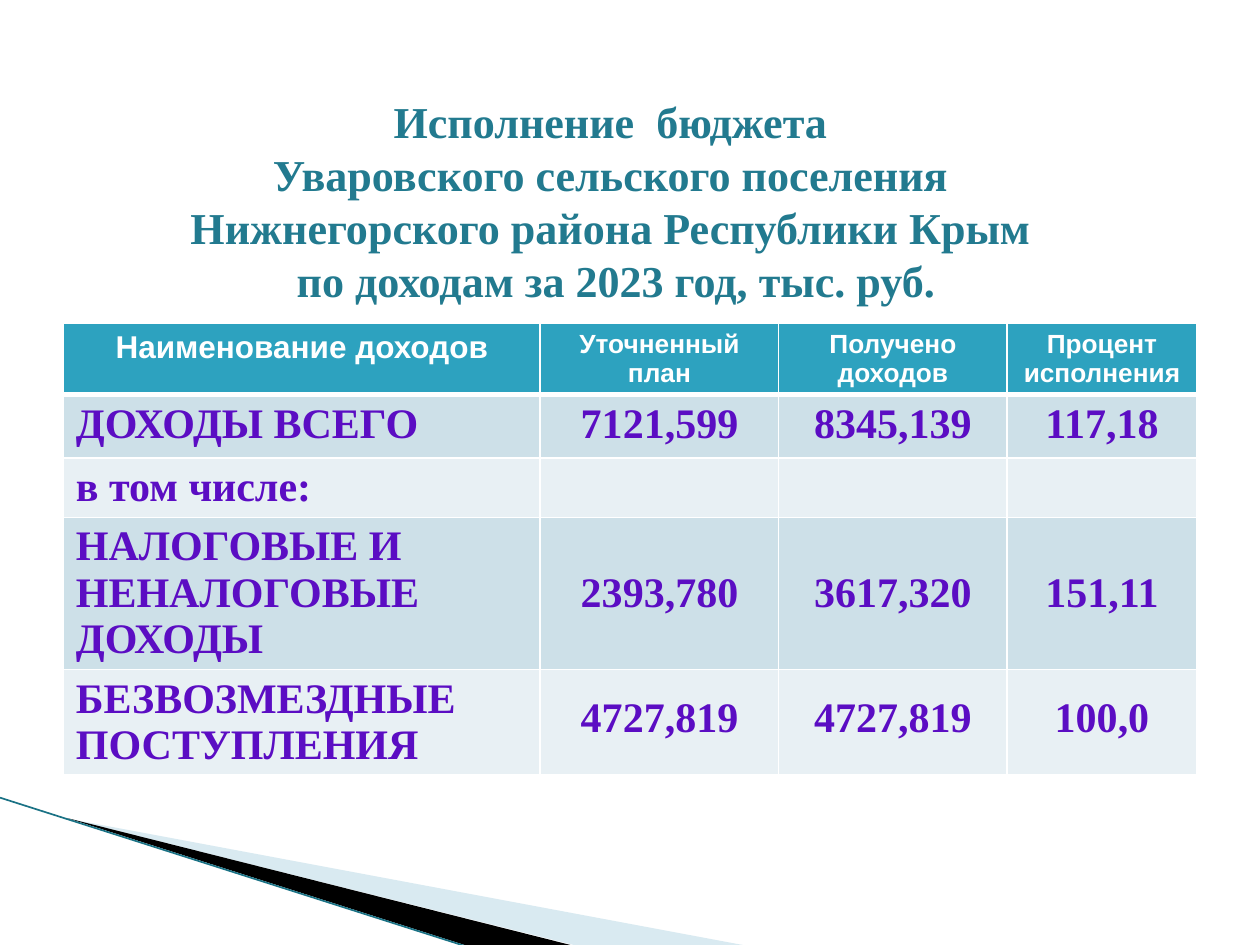
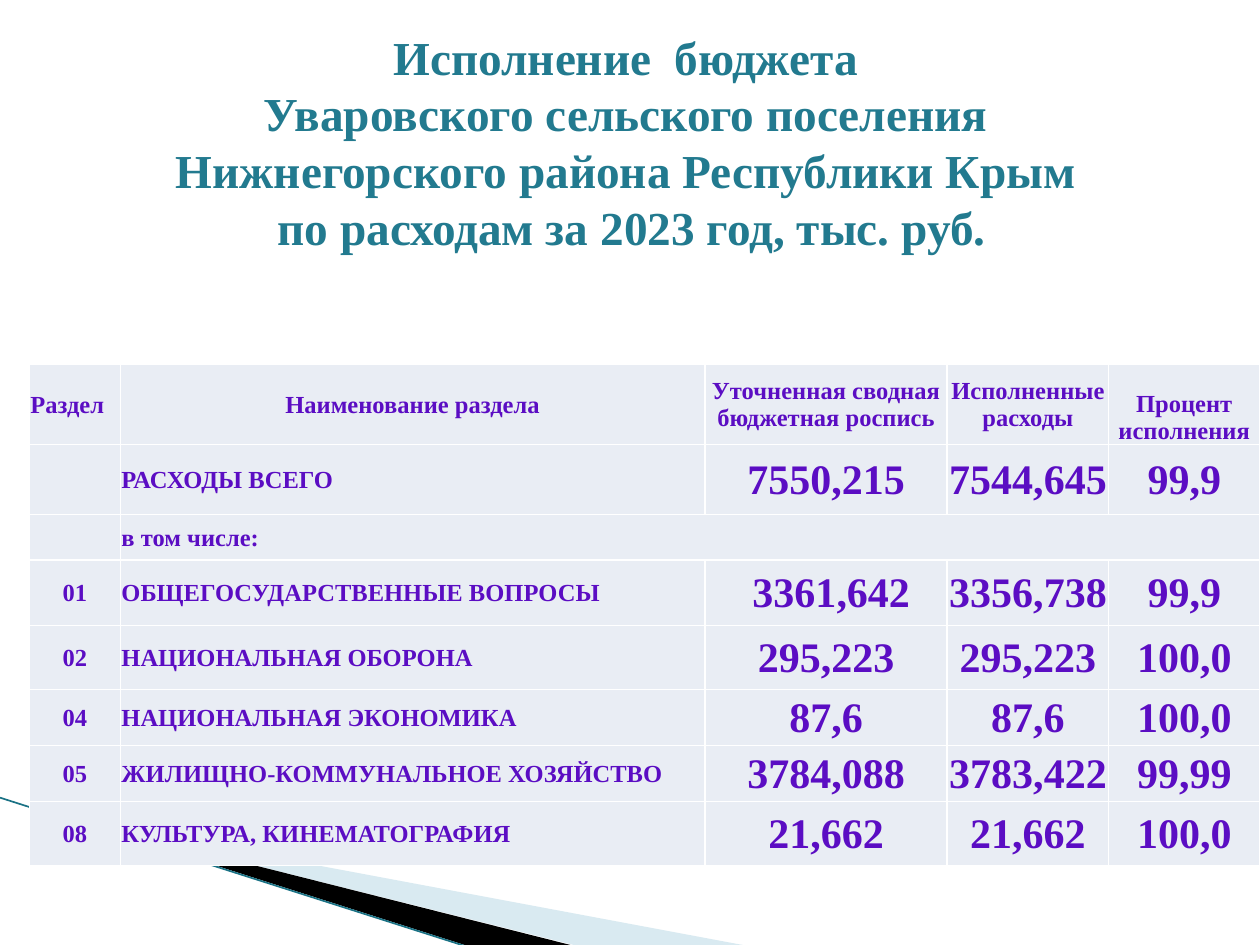
from dataclasses import dataclass
from typing import Callable

from lxml import etree
from pptx import Presentation
from pptx.dml.color import RGBColor
from pptx.enum.shapes import MSO_CONNECTOR
from pptx.enum.text import MSO_ANCHOR, MSO_AUTO_SIZE, PP_ALIGN
from pptx.oxml.ns import qn
from pptx.util import Pt

LEFT, CENTER, JUSTIFY = PP_ALIGN.LEFT, PP_ALIGN.CENTER, PP_ALIGN.JUSTIFY
TOP, MIDDLE, BOTTOM = MSO_ANCHOR.TOP, MSO_ANCHOR.MIDDLE, MSO_ANCHOR.BOTTOM
NO_AUTOFIT = MSO_AUTO_SIZE.NONE
STRAIGHT = MSO_CONNECTOR.STRAIGHT
TITLE_ONLY = 5

# Shared fonts and colours
SERIF, SANS = "Times New Roman", "Arial"
WHITE, BLACK = "FFFFFF", "000000"
TITLE_TEAL, LINE_TEAL = "227A8F", "1A7285"
VIOLET = "5B0DC3"
HEAD_BLUE, BAND_DARK, BAND_LIGHT = "2DA2BF", "CDE0E8", "E8F0F4"
PALE_GRAY = "E9EDF4"
WEDGE_BLUE = "A0CBDC"

Box = tuple[float, float, float, float]


@dataclass
class Wedge:
    frame: Box
    points: list[tuple[float, float]]
    color: str
    opacity: int = 100


@dataclass
class CellStyle:
    size: float
    fill: str
    align: int = CENTER
    anchor: int = MIDDLE
    font: str = SERIF
    color: str = VIOLET


@dataclass
class TitleSpec:
    subject: str
    box: Box
    size: float
    spacing: float


@dataclass
class TableSpec:
    left: float
    top: float
    widths: list[float]
    heights: list[float]
    rows: list[list[str]]
    style: Callable[[int, int], CellStyle]
    insets: Box
    head_rule: float = 1


def rgb(color: str) -> RGBColor:
    return RGBColor.from_string(color)


# Corner decoration
WEDGES = [
    Wedge((56.2, 393.8, 299.5, 113.8), [(39.6, 468), (424.5, 540), (328, 540)],
          WEDGE_BLUE, 40),
    Wedge((-4.3, 455.8, 299.5, 66.2), [(38.5, 467.5), (326, 540), (265.5, 540)], BLACK),
]


def draw_wedge(slide, wedge: Wedge) -> None:
    pts = [(Pt(x), Pt(y)) for x, y in wedge.points]
    builder = slide.shapes.build_freeform(*pts[0])
    builder.add_line_segments(pts[1:])
    sp = builder.convert_to_shape()
    sp.shadow.inherit = False
    sp.line.fill.background()
    sp.fill.solid()
    sp.fill.fore_color.rgb = rgb(wedge.color)
    if wedge.opacity < 100:
        clr = sp._element.spPr.find(".//" + qn("a:srgbClr"))
        etree.SubElement(clr, qn("a:alpha")).set("val", str(wedge.opacity * 1000))
    # The outline reaches beyond its frame, so its points are set from the frame corner
    sp.left, sp.top, sp.width, sp.height = map(Pt, wedge.frame)
    outline = sp._element.spPr.find(".//" + qn("a:path"))
    outline.set("w", str(sp.width))
    outline.set("h", str(sp.height))
    for pt, (x, y) in zip(outline.iter(qn("a:pt")), pts):
        pt.set("x", str(x - sp.left))
        pt.set("y", str(y - sp.top))


def draw_corner(slide) -> None:
    for wedge in WEDGES:
        draw_wedge(slide, wedge)
    line = slide.shapes.add_connector(STRAIGHT, Pt(-0.7), Pt(455.6), Pt(267), Pt(541))
    line.line.color.rgb = rgb(LINE_TEAL)
    line.line.width = Pt(0.95)
    etree.SubElement(line._element.spPr, qn("a:effectLst"))


# Title
def set_title(slide, spec: TitleSpec) -> None:
    sp = slide.shapes.title
    sp.left, sp.top, sp.width, sp.height = map(Pt, spec.box)
    tf = sp.text_frame
    tf.auto_size = NO_AUTOFIT
    tf.vertical_anchor = MIDDLE
    lines = ["Исполнение  бюджета ", "Уваровского сельского поселения ",
             "Нижнегорского района Республики Крым ",
             f"по {spec.subject} за 2023 год, тыс. руб."]
    for i, text in enumerate(lines):
        p = tf.add_paragraph() if i else tf.paragraphs[0]
        p.alignment = CENTER
        p.line_spacing = Pt(spec.spacing)
        add_run(p, text, spec.size, SERIF, TITLE_TEAL)


def add_run(p, text: str, size: float, font: str, color: str) -> None:
    r = p.add_run()
    r.text = text
    r.font.size = Pt(size)
    r.font.name = font
    r.font.bold = True
    r.font.color.rgb = rgb(color)


# Tables
def set_border(cell, side: str, width: float) -> None:
    ln = etree.SubElement(cell._tc.get_or_add_tcPr(), qn(f"a:ln{side}"))
    ln.set("w", str(Pt(width)))
    fill = etree.SubElement(ln, qn("a:solidFill"))
    etree.SubElement(fill, qn("a:srgbClr")).set("val", WHITE)


def write_cell(cell, text: str, style: CellStyle) -> None:
    cell.fill.solid()
    cell.fill.fore_color.rgb = rgb(style.fill)
    cell.vertical_anchor = style.anchor
    if text:
        p = cell.text_frame.paragraphs[0]
        p.alignment = style.align
        add_run(p, text, style.size, style.font, style.color)


def draw_table(slide, spec: TableSpec):
    frame = slide.shapes.add_table(
        len(spec.heights), len(spec.widths), Pt(spec.left), Pt(spec.top),
        Pt(sum(spec.widths)), Pt(sum(spec.heights)))
    table = frame.table
    for column, width in zip(table.columns, spec.widths):
        column.width = Pt(width)
    for i, (row, height) in enumerate(zip(table.rows, spec.heights)):
        row.height = Pt(height)
        for j, cell in enumerate(row.cells):
            (cell.margin_left, cell.margin_top,
             cell.margin_right, cell.margin_bottom) = map(Pt, spec.insets)
            set_border(cell, "L", 1)
            set_border(cell, "R", 1)
            set_border(cell, "T", spec.head_rule if i == 1 else 1)
            set_border(cell, "B", spec.head_rule if i == 0 else 1)
            write_cell(cell, spec.rows[i][j], spec.style(i, j))
    return table


def income_style(i: int, j: int) -> CellStyle:
    if i == 0:
        return CellStyle(15 if j else 18, HEAD_BLUE, anchor=TOP, font=SANS, color=WHITE)
    return CellStyle(24, BAND_DARK if i % 2 else BAND_LIGHT,
                     align=CENTER if j else LEFT,
                     anchor=MIDDLE if j and i > 2 else TOP)


def expense_style(i: int, j: int) -> CellStyle:
    if i == 0:
        return CellStyle(14, PALE_GRAY, align=CENTER if j else LEFT,
                         anchor=BOTTOM if j == 4 else MIDDLE)
    if j == 1:
        return CellStyle(14, PALE_GRAY, align=JUSTIFY if i == 2 else LEFT)
    return CellStyle(24 if j else 14, PALE_GRAY)


INCOME_TITLE = TitleSpec("доходам", (28, 39.6, 648, 150), 25.2, 30.3)
INCOME = TableSpec(
    36.2, 184.8, [272.5, 136.3, 130.5, 108.5], [40.5, 36.5, 33.6, 87, 60],
    [["Наименование доходов", "Уточненный план", "Получено доходов", "Процент исполнения"],
     ["ДОХОДЫ ВСЕГО", "7121,599", "8345,139", "117,18"],
     ["в том числе:", "", "", ""],
     ["НАЛОГОВЫЕ И НЕНАЛОГОВЫЕ ДОХОДЫ", "2393,780", "3617,320", "151,11"],
     ["БЕЗВОЗМЕЗДНЫЕ ПОСТУПЛЕНИЯ", "4727,819", "4727,819", "100,0"]],
    income_style, (7.2, 3.6, 7.2, 3.6), head_rule=3)

EXPENSE_TITLE = TitleSpec("расходам", (36.9, 0, 648, 161.6), 27, 32.5)
EXPENSE = TableSpec(
    16.8, 208.2, [52, 334, 138.5, 92.3, 86.4],
    [45.8, 40.1, 25.8, 37.6, 36.7, 32, 32, 36.5],
    [["Раздел", "Наименование раздела", "Уточненная сводная бюджетная роспись",
      "Исполненные расходы", "Процент исполнения"],
     ["", "РАСХОДЫ ВСЕГО", "7550,215", "7544,645", "99,9"],
     ["", "в том числе:", "", "", ""],
     ["01", "ОБЩЕГОСУДАРСТВЕННЫЕ ВОПРОСЫ", " 3361,642", "3356,738", "99,9"],
     ["02", "НАЦИОНАЛЬНАЯ ОБОРОНА", "295,223", "295,223", "100,0"],
     ["04", "НАЦИОНАЛЬНАЯ ЭКОНОМИКА", "87,6", "87,6", "100,0"],
     ["05", "ЖИЛИЩНО-КОММУНАЛЬНОЕ ХОЗЯЙСТВО", "3784,088", "3783,422", "99,99"],
     ["08", "КУЛЬТУРА, КИНЕМАТОГРАФИЯ", "21,662", "21,662", "100,0"]],
    expense_style, (0.6, 0.6, 0.6, 0))


def add_budget_slide(prs, title: TitleSpec, spec: TableSpec):
    slide = prs.slides.add_slide(prs.slide_layouts[TITLE_ONLY])
    draw_corner(slide)
    set_title(slide, title)
    return draw_table(slide, spec)


def main() -> None:
    prs = Presentation()
    prs.slide_width, prs.slide_height = Pt(720), Pt(540)
    incomes = add_budget_slide(prs, INCOME_TITLE, INCOME)
    for j in range(1, 4):
        incomes.cell(4, j).margin_bottom = Pt(8.6)
    expenses = add_budget_slide(prs, EXPENSE_TITLE, EXPENSE)
    expenses.cell(2, 1).merge(expenses.cell(2, 4))
    prs.save("out.pptx")


if __name__ == "__main__":
    main()
